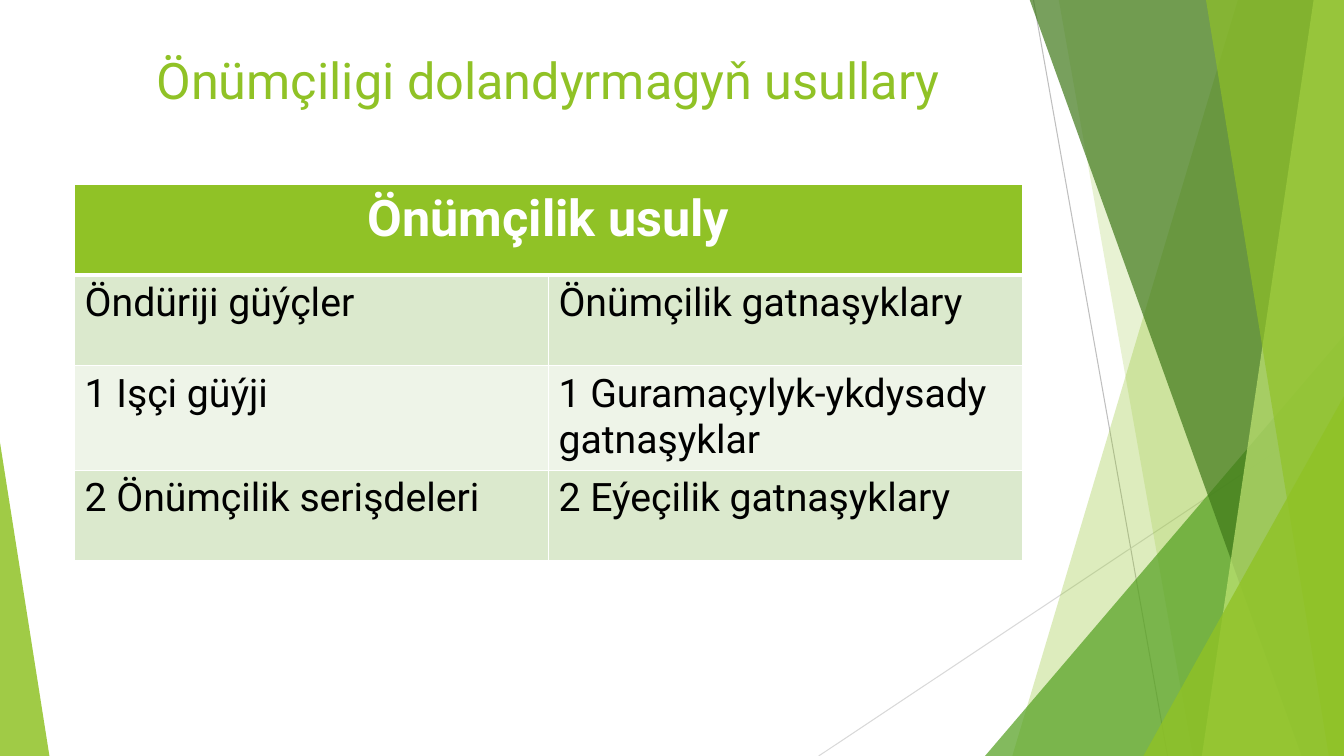
from lxml.etree import SubElement
from pptx import Presentation
from pptx.dml.color import RGBColor
from pptx.enum.shapes import MSO_CONNECTOR, MSO_SHAPE
from pptx.enum.text import MSO_ANCHOR, PP_ALIGN
from pptx.oxml.ns import qn
from pptx.util import Inches, Pt

WIDTH, HEIGHT = 13.33, 7.5
TOP = -0.01
FONT = "Roboto"

WHITE = RGBColor(0xFF, 0xFF, 0xFF)
BLACK = RGBColor(0x00, 0x00, 0x00)
LIME = RGBColor(0x90, 0xC2, 0x26)
PALE_LIME = RGBColor(0xC0, 0xE4, 0x74)
GREEN = RGBColor(0x54, 0xA0, 0x21)
DARK_GREEN = RGBColor(0x3F, 0x78, 0x19)
BAND_DARK = RGBColor(0xDB, 0xE9, 0xCD)
BAND_LIGHT = RGBColor(0xEE, 0xF4, 0xE8)
GRAY = RGBColor(0xBF, 0xBF, 0xBF)
LIGHT_GRAY = RGBColor(0xD9, 0xD9, 0xD9)

TITLE = "Önümçiligi dolandyrmagyň usullary"
TABLE_HEADER = "Önümçilik usuly"
TABLE_ROWS = [
    ("Öndüriji güýçler", "Önümçilik gatnaşyklary"),
    ("1 Işçi güýji", "1 Guramaçylyk-ykdysady gatnaşyklar"),
    ("2 Önümçilik serişdeleri", "2 Eýeçilik gatnaşyklary"),
]
LEFT, CONTENT_WIDTH = 0.74, 9.4
TITLE_TOP, TITLE_HEIGHT = 0.41, 0.83
TABLE_TOP, ROW_HEIGHT = 1.83, 0.9

THIN_LINES = [
    ((10.25, 0), (11.58, HEIGHT), GRAY),
    ((WIDTH, 4.03), (8.12, HEIGHT), LIGHT_GRAY),
]
# Back to front. A band runs from its top left x and bottom left x to the right edge;
# a triangle has left, top, width and the position of its tip.
FACETS = [
    ("band", (12.28, 10.04), LIME, 30),
    ("band", (10.5, 11.83), LIME, 20),
    ("triangle", (9.77, 3.33, 3.56, 1), GREEN, 72),
    ("band", (10.21, 12.91), DARK_GREEN, 70),
    ("band", (13.03, 11.92), PALE_LIME, 70),
    ("band", (11.96, 13.18), LIME, 65),
    ("triangle", (11.34, 3.93, 1.99, 1), LIME, 80),
    ("triangle", (0, 4.39, 0.49, 0), LIME, 85),
]


def add_thin_line(slide, start, end, color):
    points = [Inches(value) for value in (*start, *end)]
    line = slide.shapes.add_connector(MSO_CONNECTOR.STRAIGHT, *points)
    line.line.color.rgb = color
    line.line.width = Pt(0.75)
    SubElement(line._element.spPr, qn("a:effectLst"))


def add_band(slide, top_x, bottom_x):
    corners = [(top_x, TOP), (WIDTH, TOP), (WIDTH, HEIGHT), (bottom_x, HEIGHT)]
    points = [(Inches(x), Inches(y)) for x, y in corners]
    builder = slide.shapes.build_freeform(*points[0], scale=1.0)
    builder.add_line_segments(points[1:], close=True)
    return builder.convert_to_shape()


def add_triangle(slide, left, top, width, tip):
    box = [Inches(value) for value in (left, top, width, HEIGHT - top)]
    shape = slide.shapes.add_shape(MSO_SHAPE.ISOSCELES_TRIANGLE, *box)
    shape.adjustments[0] = tip
    return shape


def paint(shape, color, opacity):
    """Fill the shape with a see-through colour, opacity in percent."""
    shape.shadow.inherit = False
    shape.line.fill.background()
    shape.fill.solid()
    shape.fill.fore_color.rgb = color
    color_element = shape._element.spPr.find(qn("a:solidFill"))[0]
    SubElement(color_element, qn("a:alpha"), val=str(opacity * 1000))


def write(text_frame, text, alignment, **font_values):
    paragraph = text_frame.paragraphs[0]
    paragraph.alignment = alignment
    run = paragraph.add_run()
    run.text = text
    run.font.color.rgb = font_values.pop("color")
    for name, value in {"name": FONT, "bold": False, **font_values}.items():
        setattr(run.font, name, value)


def set_borders(cell, widths):
    """Draw white borders; widths maps the side to points."""
    properties = cell._tc.get_or_add_tcPr()
    for position, (side, width) in enumerate(widths.items()):
        border = properties.makeelement(qn(f"a:ln{side}"), {"w": str(Pt(width))})
        fill = SubElement(border, qn("a:solidFill"))
        SubElement(fill, qn("a:srgbClr"), val=str(WHITE))
        properties.insert(position, border)


def add_title(slide):
    box = [Inches(value) for value in (LEFT, TITLE_TOP, CONTENT_WIDTH, TITLE_HEIGHT)]
    text_frame = slide.shapes.add_textbox(*box).text_frame
    text_frame.word_wrap = True
    text_frame.vertical_anchor = MSO_ANCHOR.MIDDLE
    write(text_frame, TITLE, PP_ALIGN.CENTER, size=Pt(36), color=LIME)
    text_frame.paragraphs[0].line_spacing = 0.9


def add_methods_table(slide):
    row_count = len(TABLE_ROWS) + 1
    box = [Inches(value) for value in (LEFT, TABLE_TOP, CONTENT_WIDTH, ROW_HEIGHT * row_count)]
    table = slide.shapes.add_table(row_count, 2, *box).table
    for row_index in range(row_count):
        for cell in table.rows[row_index].cells:
            cell.fill.solid()
            cell.fill.fore_color.rgb = (
                LIME if row_index == 0 else BAND_DARK if row_index % 2 else BAND_LIGHT
            )
            set_borders(cell, {
                "L": 1,
                "R": 1,
                "T": 3 if row_index == 1 else 1,
                "B": 3 if row_index == 0 else 1,
            })
    header = table.cell(0, 0)
    header.merge(table.cell(0, 1))
    write(header.text_frame, TABLE_HEADER, PP_ALIGN.CENTER, size=Pt(36), color=WHITE, bold=True)
    for row_index, texts in enumerate(TABLE_ROWS, start=1):
        for column_index, text in enumerate(texts):
            text_frame = table.cell(row_index, column_index).text_frame
            write(text_frame, text, PP_ALIGN.LEFT, size=Pt(28), color=BLACK)


def main():
    presentation = Presentation()
    presentation.slide_width = Inches(WIDTH)
    presentation.slide_height = Inches(HEIGHT)
    slide = presentation.slides.add_slide(presentation.slide_layouts[6])
    for start, end, color in THIN_LINES:
        add_thin_line(slide, start, end, color)
    builders = {"band": add_band, "triangle": add_triangle}
    for kind, geometry, color, opacity in FACETS:
        paint(builders[kind](slide, *geometry), color, opacity)
    add_title(slide)
    add_methods_table(slide)
    presentation.save("out.pptx")


if __name__ == "__main__":
    main()
